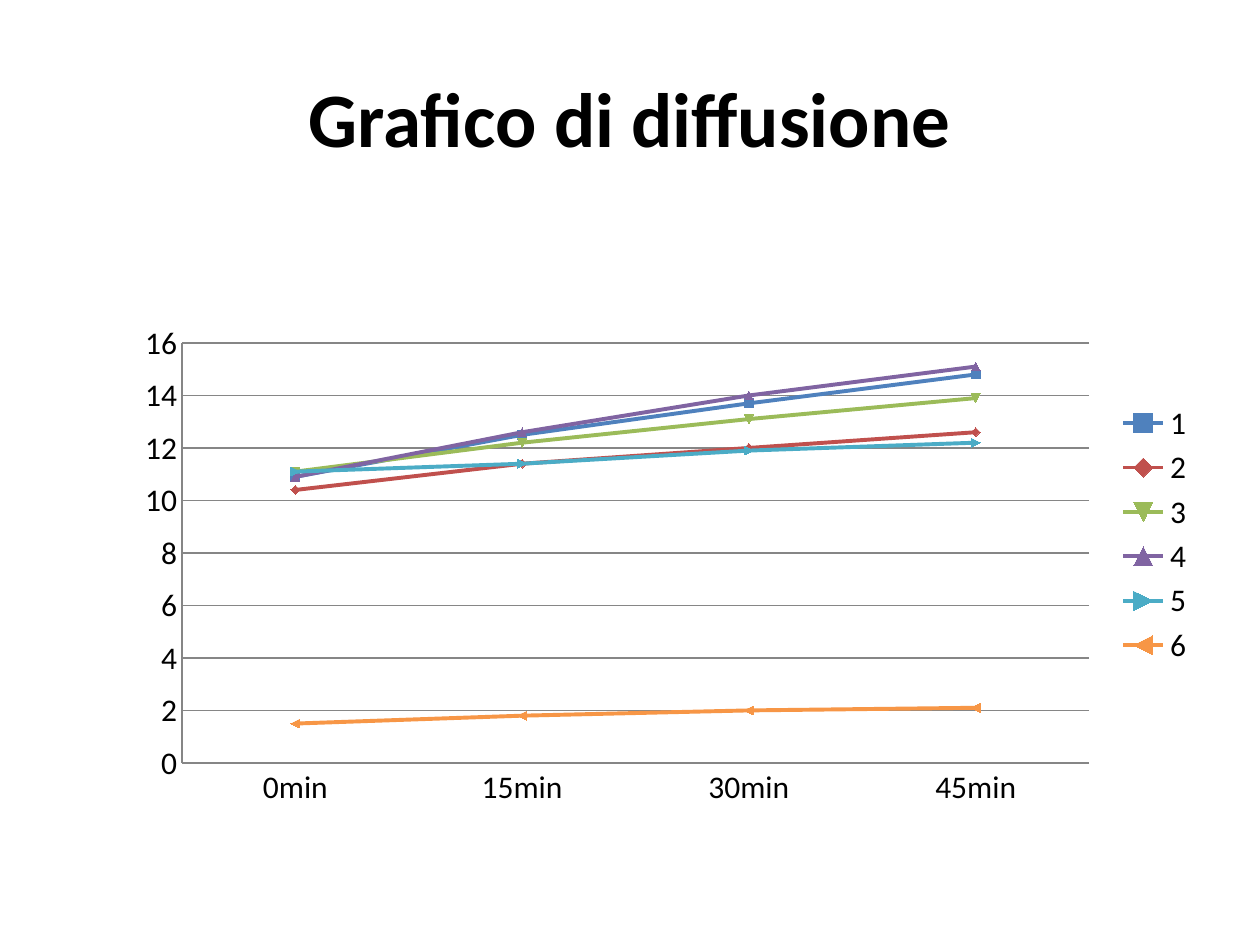
from dataclasses import dataclass

from lxml import etree
from pptx import Presentation
from pptx.chart.data import CategoryChartData
from pptx.dml.color import RGBColor
from pptx.enum.chart import XL_CHART_TYPE, XL_LEGEND_POSITION, XL_TICK_MARK
from pptx.enum.text import MSO_ANCHOR, PP_ALIGN
from pptx.oxml.ns import qn
from pptx.util import Cm, Pt


@dataclass(frozen=True)
class Theme:
    font: str = "Calibri"
    text: str = "000000"
    axis: str = "868686"
    series: tuple = ("4F81BD", "C0504D", "9BBB59", "8064A2", "4BACC6", "F79646")
    title_size: int = 44
    chart_size: int = 18
    axis_width: float = 0.75
    series_width: float = 2.25


THEME = Theme()
TIMES = ("0min", "15min", "30min", "45min")
DIFFUSION = {
    "1": (10.9, 12.5, 13.7, 14.8),
    "2": (10.4, 11.4, 12, 12.6),
    "3": (11.1, 12.2, 13.1, 13.9),
    "4": (10.9, 12.6, 14, 15.1),
    "5": (11.1, 11.4, 11.9, 12.2),
    "6": (1.5, 1.8, 2, 2.1),
}


def style_font(font, size, bold=False):
    font.name = THEME.font
    font.size = Pt(size)
    font.bold = bold
    font.color.rgb = RGBColor.from_string(THEME.text)


def style_line(line, color, width):
    line.color.rgb = RGBColor.from_string(color)
    line.width = Pt(width)


def set_plot_area(chart, x, y, w, h):
    """Fix the inner plot area, in fractions of the chart."""
    plot_area = chart.plots[0]._element.getparent()
    for old in plot_area.findall(qn("c:layout")):
        plot_area.remove(old)
    layout = etree.Element(qn("c:layout"))
    manual = etree.SubElement(layout, qn("c:manualLayout"))
    settings = (("layoutTarget", "inner"), ("xMode", "edge"), ("yMode", "edge"),
                ("x", x), ("y", y), ("w", w), ("h", h))
    for tag, value in settings:
        etree.SubElement(manual, qn(f"c:{tag}")).set("val", str(value))
    plot_area.insert(0, layout)


def add_title(slide, left, top, width, height):
    tf = slide.shapes.add_textbox(left, top, width, height).text_frame
    tf.word_wrap = True
    tf.vertical_anchor = MSO_ANCHOR.MIDDLE
    p = tf.paragraphs[0]
    p.text = "Grafico di diffusione"
    p.alignment = PP_ALIGN.CENTER
    style_font(p.runs[0].font, THEME.title_size, bold=True)


def add_diffusion_chart(slide, left, top, width, height):
    data = CategoryChartData()
    data.categories = TIMES
    for name, values in DIFFUSION.items():
        data.add_series(name, values)
    chart = slide.shapes.add_chart(
        XL_CHART_TYPE.LINE_MARKERS, left, top, width, height, data).chart
    chart.has_title = False
    style_font(chart.font, THEME.chart_size)
    set_plot_area(chart, 0.095, 0.17, 0.801, 0.725)

    # Legend
    chart.has_legend = True
    chart.legend.position = XL_LEGEND_POSITION.RIGHT
    chart.legend.include_in_layout = False

    # Axes and grid
    for axis in (chart.category_axis, chart.value_axis):
        axis.major_tick_mark = axis.minor_tick_mark = XL_TICK_MARK.NONE
        style_line(axis.format.line, THEME.axis, THEME.axis_width)
    axis = chart.value_axis
    axis.minimum_scale, axis.maximum_scale, axis.major_unit = 0, 16, 2
    axis.tick_labels.number_format = "General"
    axis.tick_labels.number_format_is_linked = False
    axis.has_major_gridlines = True
    style_line(axis.major_gridlines.format.line, THEME.axis, THEME.axis_width)

    # Series lines, with automatic marker shapes
    plot = chart.plots[0]
    plot.vary_by_categories = False
    for series, color in zip(plot.series, THEME.series):
        series.smooth = False
        style_line(series.format.line, color, THEME.series_width)
        fill = series.marker.format.fill
        fill.solid()
        fill.fore_color.rgb = RGBColor.from_string(color)


def main():
    prs = Presentation()
    prs.slide_width, prs.slide_height = Cm(25.4), Cm(19.05)
    s = prs.slides.add_slide(prs.slide_layouts[6])
    add_title(s, Cm(1.27), Cm(0.76), Cm(22.86), Cm(3.18))
    add_diffusion_chart(s, Cm(1.5), Cm(4.93), Cm(22.83), Cm(11.68))
    prs.save("out.pptx")


if __name__ == "__main__":
    main()
